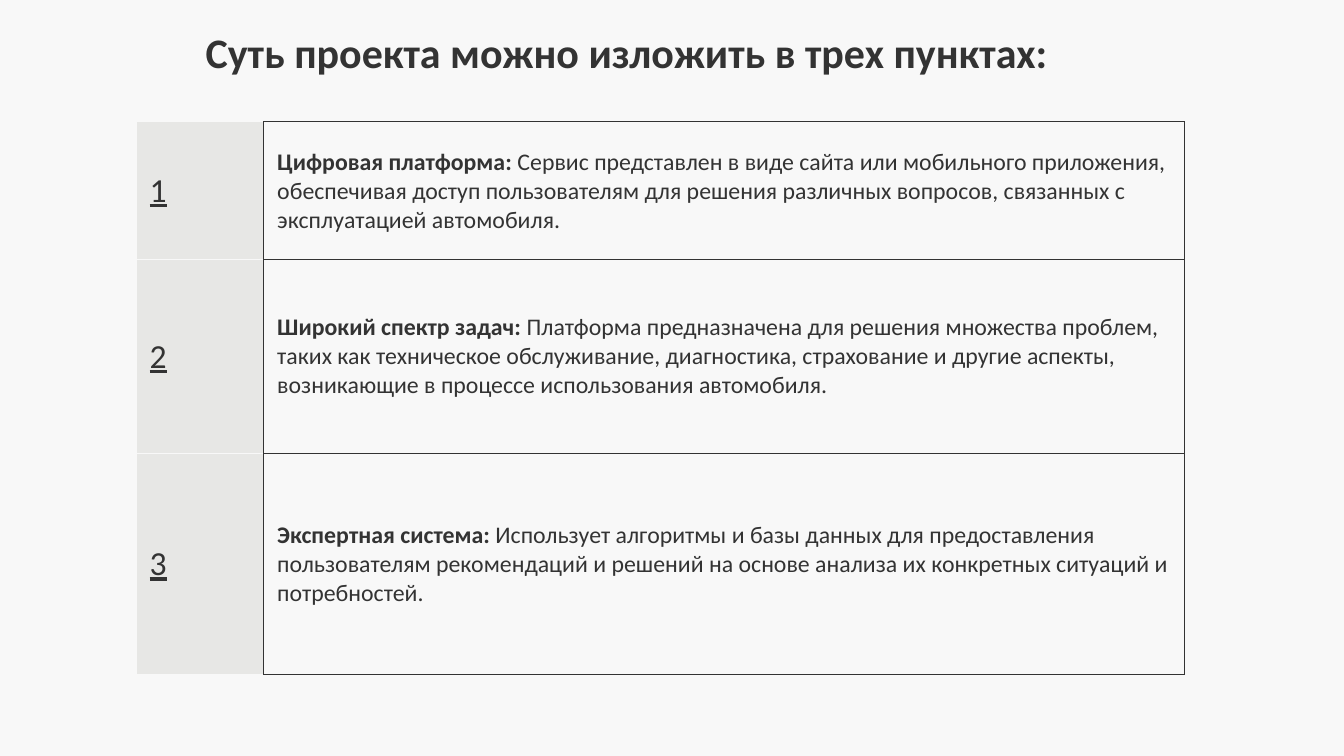
from lxml.etree import SubElement as Sub
from pptx import Presentation as Deck
from pptx.dml.color import RGBColor as Rgb
from pptx.enum.text import MSO_ANCHOR as Anchor, PP_ALIGN as Align
from pptx.oxml.ns import qn
from pptx.util import Inches, Pt

HUES = {"paper": "F8F8F8", "ink": "333333", "band": "E7E7E5"}
SIDES = ("L", "R", "T", "B")
POINTS = [
    ("Цифровая платформа: ",
     "Сервис представлен в виде сайта или мобильного приложения, обеспечивая доступ "
     "пользователям для решения различных вопросов, связанных с эксплуатацией автомобиля."),
    ("Широкий спектр задач: ",
     "Платформа предназначена для решения множества проблем, таких как техническое "
     "обслуживание, диагностика, страхование и другие аспекты, возникающие в процессе "
     "использования автомобиля."),
    ("Экспертная система: ",
     "Использует алгоритмы и базы данных для предоставления пользователям рекомендаций "
     "и решений на основе анализа их конкретных ситуаций и потребностей."),
]


class Page:
    font = "Calibri"
    line = Pt(0.75)

    def __init__(self, deck):
        self.wide, self.high = deck.slide_width, deck.slide_height
        self.slide = deck.slides.add_slide(deck.slide_layouts[6])
        self.paint(self.slide.background.fill, "paper")

    def col(self, share):
        return int(self.wide * share / 100)

    def row(self, share):
        return int(self.high * share / 100)

    def paint(self, fill, hue):
        fill.solid()
        fill.fore_color.rgb = Rgb.from_string(HUES[hue])

    def pad(self, item):
        for side in ("left", "top", "right", "bottom"):
            setattr(item, f"margin_{side}", self.col(1))

    def words(self, para, text, size, **style):
        run = para.add_run()
        run.text = text
        for name, value in {"name": self.font, "size": Pt(size), **style}.items():
            setattr(run.font, name, value)
        run.font.color.rgb = Rgb.from_string(HUES["ink"])

    def title(self, text, left, top, wide, high):
        box = self.slide.shapes.add_textbox(
            self.col(left), self.row(top), self.col(wide), self.row(high))
        frame = box.text_frame
        frame.word_wrap = True
        frame.vertical_anchor = Anchor.MIDDLE
        self.pad(frame)
        para = frame.paragraphs[0]
        para.alignment = Align.CENTER
        self.words(para, text, 30, bold=True)

    def edge(self, cell, hues):
        props = cell._tc.get_or_add_tcPr()
        for side, hue in zip(SIDES, hues):
            line = Sub(props, qn(f"a:ln{side}"), w=str(self.line))
            Sub(Sub(line, qn("a:solidFill")), qn("a:srgbClr"), val=HUES[hue])

    def cell(self, cell, hue, edges):
        self.edge(cell, edges)
        self.paint(cell.fill, hue)
        self.pad(cell)
        cell.vertical_anchor = Anchor.MIDDLE
        return cell.text_frame.paragraphs[0]

    def table(self, points, left, top, cols, rows):
        frame = self.slide.shapes.add_table(
            len(rows), len(cols), self.col(left), self.row(top),
            self.col(sum(cols)), self.row(sum(rows)))
        grid = frame.table
        grid.first_row = grid.horz_banding = False
        for slot, share in zip(grid.columns, cols):
            slot.width = self.col(share)
        for slot, share in zip(grid.rows, rows):
            slot.height = self.row(share)
        for num, (head, body) in enumerate(points):
            para = self.cell(grid.cell(num, 0), "band", ("paper", "ink", "paper", "paper"))
            self.words(para, str(num + 1), 24, underline=True)
            para = self.cell(grid.cell(num, 1), "paper", ("ink",) * 4)
            para.space_after = Pt(16)
            self.words(para, head, 17, bold=True)
            self.words(para, body, 17, bold=False)


def main():
    deck = Deck()
    deck.slide_width, deck.slide_height = Inches(13.33), Inches(7.5)
    page = Page(deck)
    page.title("Суть проекта можно изложить в трех пунктах:", 0, 1.2, 93.3, 11.2)
    page.table(POINTS, 10.13, 16.13, (9.5, 68.5), (18.25, 25.6, 29.3))
    deck.save("out.pptx")


if __name__ == "__main__":
    main()
